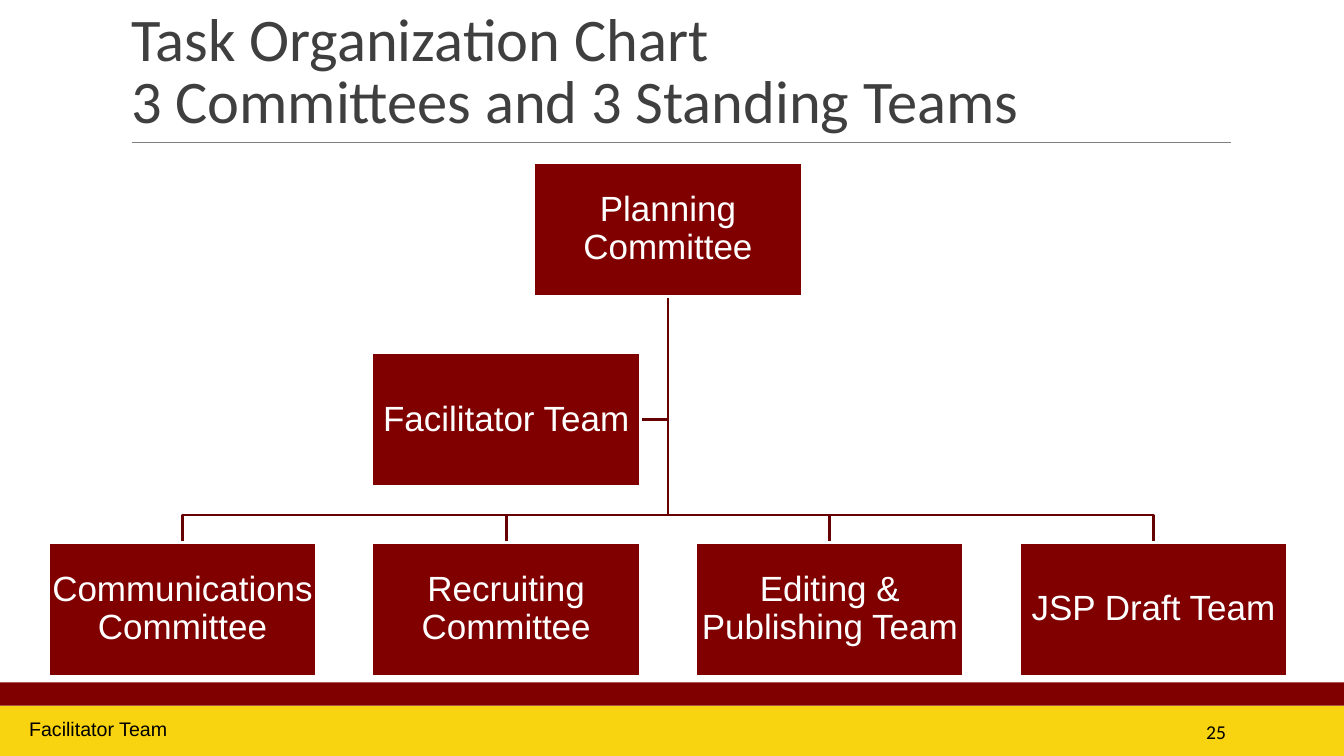
import pptx
import pptx.util
import pptx.dml.color
import pptx.enum.shapes
import pptx.enum.text
import pptx.oxml.ns
import lxml.etree

Inches = pptx.util.Inches
Pt = pptx.util.Pt
RGBColor = pptx.dml.color.RGBColor
Align = pptx.enum.text.PP_ALIGN
Anchor = pptx.enum.text.MSO_ANCHOR

MAROON = RGBColor(0x80, 0x00, 0x00)
DARK_MAROON = RGBColor(0x67, 0x00, 0x00)
GOLD = RGBColor(0xF8, 0xD4, 0x10)
GRAY = RGBColor(0x7F, 0x7F, 0x7F)
CHARCOAL = RGBColor(0x3F, 0x3F, 0x3F)
BLACK = RGBColor(0x00, 0x00, 0x00)
WHITE = RGBColor(0xFF, 0xFF, 0xFF)

TITLE_LINES = ["Task Organization Chart", "3 Committees and 3 Standing Teams"]
LEAD = "Planning Committee"
ASSISTANT = "Facilitator Team"
UNITS = [
    "Communications Committee",
    "Recruiting Committee",
    "Editing & Publishing Team",
    "JSP Draft Team",
]
FOOTER = "Facilitator Team"
PAGE_NUMBER = "25"
BANDS = [(7, 0.5, GOLD), (6.77, 0.23, MAROON)]

PAGE_WIDTH = 13.33
BOX_WIDTH, BOX_HEIGHT = 2.66, 1.33
FIRST_LEFT, PITCH = 0.48, 3.21
LEAD_TOP, ASSISTANT_TOP, UNIT_TOP = 1.61, 3.5, 5.38
BRANCH_Y = 5.11
LEAD_LEFT = FIRST_LEFT + 1.5 * PITCH
LEAD_CENTER = LEAD_LEFT + BOX_WIDTH / 2
LEAD_BOTTOM = LEAD_TOP + BOX_HEIGHT


def write_text(frame, lines, size, color, font="Arial", align=Align.LEFT,
               anchor=Anchor.MIDDLE, spacing=1.0, inset=(0.1, 0.05)):
    frame.word_wrap = True
    frame.auto_size = pptx.enum.text.MSO_AUTO_SIZE.NONE
    frame.vertical_anchor = anchor
    frame.margin_left = frame.margin_right = Inches(inset[0])
    frame.margin_top = frame.margin_bottom = Inches(inset[1])
    para = frame.paragraphs[0]
    para.alignment = align
    para.line_spacing = spacing
    para.space_before = Pt(0)
    for index, line in enumerate(lines):
        if index:
            para.add_line_break()
        span = para.add_run()
        span.text = line
        span.font.size = Pt(size)
        span.font.name = font
        span.font.color.rgb = color


def add_rectangle(page, left, top, width, height, fill):
    box = page.shapes.add_shape(
        pptx.enum.shapes.MSO_SHAPE.RECTANGLE,
        Inches(left), Inches(top), Inches(width), Inches(height))
    box.shadow.inherit = False
    box.fill.solid()
    box.fill.fore_color.rgb = fill
    box.line.fill.background()
    return box


def add_unit(page, name, left, top):
    box = add_rectangle(page, left, top, BOX_WIDTH, BOX_HEIGHT, MAROON)
    box.line.color.rgb = WHITE
    box.line.width = Pt(2)
    write_text(box.text_frame, [name], 25, WHITE, align=Align.CENTER,
               spacing=0.9, inset=(0.02, 0.02))


def add_branch(page, points):
    corners = [(Inches(x), Inches(y)) for x, y in points]
    builder = page.shapes.build_freeform(*corners[0])
    builder.add_line_segments(corners[1:], close=False)
    branch = builder.convert_to_shape()
    branch.shadow.inherit = False
    branch.fill.background()
    branch.line.color.rgb = DARK_MAROON
    branch.line.width = Pt(2)


def add_rule(page):
    rule = page.shapes.add_connector(
        pptx.enum.shapes.MSO_CONNECTOR.STRAIGHT,
        Inches(1.31), Inches(1.41), Inches(12.21), Inches(1.41))
    rule.line.color.rgb = GRAY
    rule.line.width = Pt(0.75)
    properties = rule._element.spPr
    lxml.etree.SubElement(properties, pptx.oxml.ns.qn("a:effectLst"))


def add_chart_tree(page):
    lefts = [FIRST_LEFT + PITCH * index for index in range(len(UNITS))]
    assistant_left = lefts[1]
    assistant_middle = ASSISTANT_TOP + BOX_HEIGHT / 2
    add_branch(page, [(LEAD_CENTER, LEAD_BOTTOM),
                      (LEAD_CENTER, assistant_middle),
                      (assistant_left + BOX_WIDTH, assistant_middle)])
    for left in lefts:
        center = left + BOX_WIDTH / 2
        add_branch(page, [(LEAD_CENTER, LEAD_BOTTOM), (LEAD_CENTER, BRANCH_Y),
                          (center, BRANCH_Y), (center, UNIT_TOP)])
    add_unit(page, LEAD, LEAD_LEFT, LEAD_TOP)
    for name, left in zip(UNITS, lefts):
        add_unit(page, name, left, UNIT_TOP)
    add_unit(page, ASSISTANT, assistant_left, ASSISTANT_TOP)


def main():
    deck = pptx.Presentation()
    deck.slide_width = Inches(PAGE_WIDTH)
    deck.slide_height = Inches(7.5)
    page = deck.slides.add_slide(deck.slide_layouts[5])
    for top, height, color in BANDS:
        add_rectangle(page, 0, top, PAGE_WIDTH, height, color)
    add_rule(page)
    add_chart_tree(page)

    title = page.shapes.title
    title.left, title.top = Inches(1.2), Inches(0.31)
    title.width, title.height = Inches(11), Inches(1.09)
    write_text(title.text_frame, TITLE_LINES, 43.2, CHARCOAL, font="Calibri",
               anchor=Anchor.BOTTOM, spacing=0.85)

    number = page.shapes.add_textbox(
        Inches(10.83), Inches(7.06), Inches(1.43), Inches(0.4))
    write_text(number.text_frame, [PAGE_NUMBER], 14, BLACK, font="Calibri",
               align=Align.RIGHT)
    footer = page.shapes.add_textbox(
        Inches(0.19), Inches(7.06), Inches(2.27), Inches(0.34))
    write_text(footer.text_frame, [FOOTER], 14, BLACK, anchor=Anchor.TOP)
    deck.save("out.pptx")


if __name__ == "__main__":
    main()
